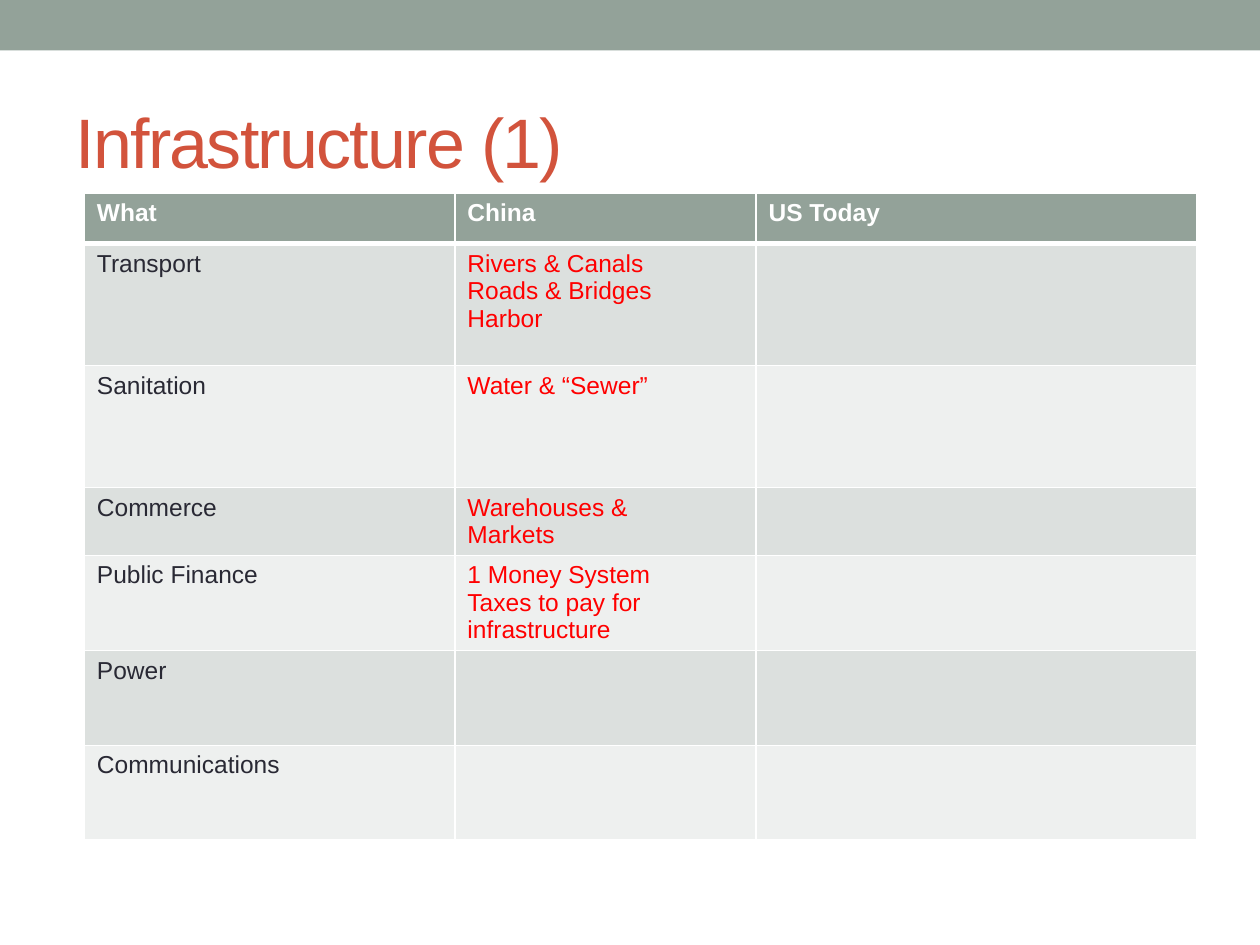
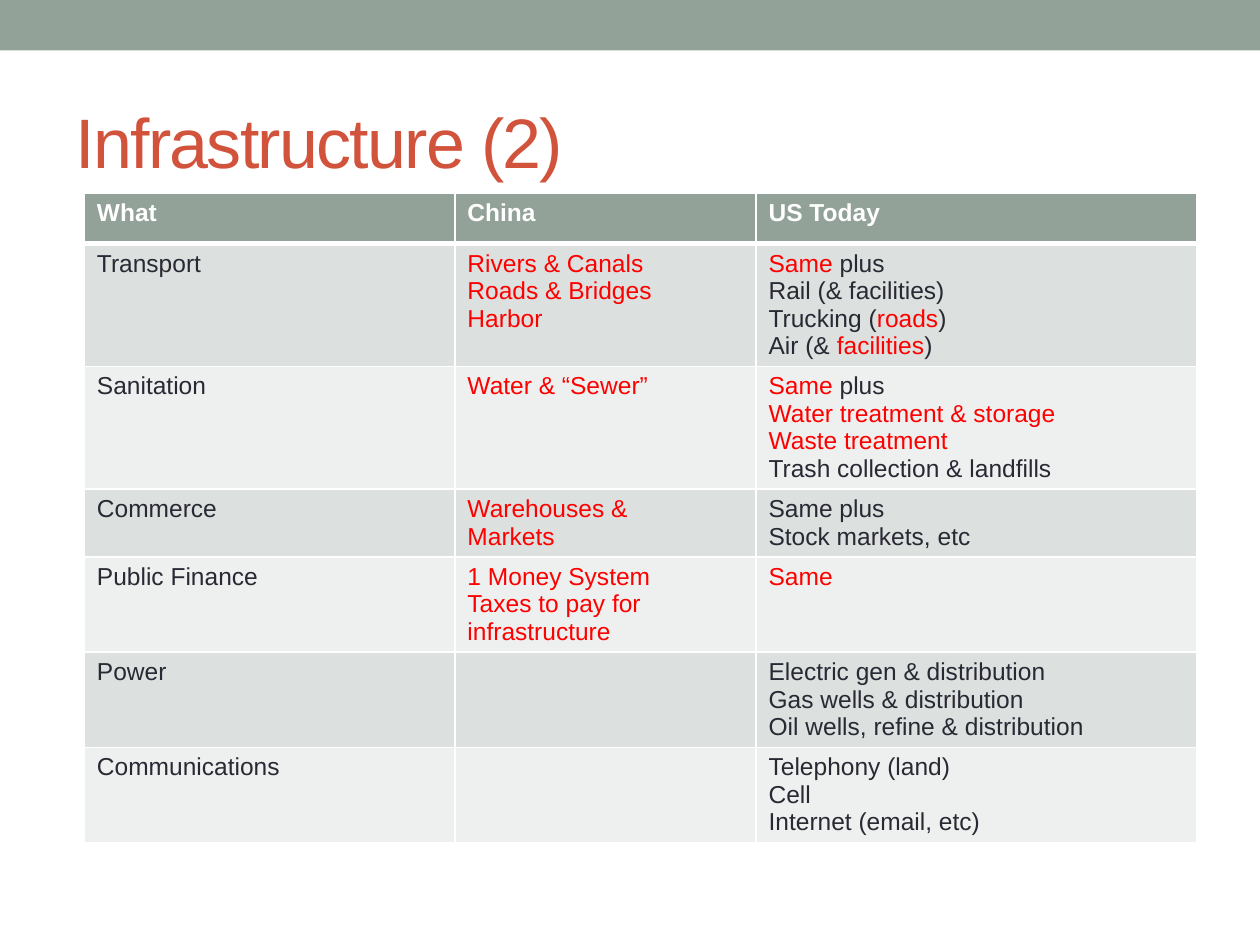
import dataclasses

import pptx
import pptx.dml.color
import pptx.enum.shapes
import pptx.enum.text
import pptx.oxml
import pptx.oxml.ns
import pptx.util
from pptx.util import Cm, Pt

# Content: words between asterisks are highlighted
HEADINGS = ("What", "China", "US Today")
TOPICS = [
    ("Transport",
     ["*Rivers & Canals*", "*Roads & Bridges*", "*Harbor*"],
     ["*Same* plus", "Rail (& facilities)", "Trucking (*roads*)", "Air (& *facilities*)"]),
    ("Sanitation",
     ["*Water & “Sewer”*"],
     ["*Same* plus", "*Water treatment & storage*", "*Waste treatment*",
      "Trash collection & landfills"]),
    ("Commerce",
     ["*Warehouses &*", "*Markets*"],
     ["Same plus", "Stock markets, etc"]),
    ("Public Finance",
     ["*1 Money System*", "*Taxes to pay for infrastructure*"],
     ["*Same*"]),
    ("Power",
     [],
     ["Electric gen & distribution", "Gas wells & distribution",
      "Oil wells, refine & distribution"]),
    ("Communications",
     [],
     ["Telephony (land)", "Cell", "Internet (email, etc)"]),
]
PAGES = [("Infrastructure (1)", False), ("Infrastructure (2)", True)]  # title, US shown

# Layout in centimetres
PAGE_SIZE = (25.4, 19.05)
BAND_HEIGHT = 1.02
TITLE_BOX = (1.27, 1.47, 22.86, 2.74)
TABLE_CORNER = (1.7, 3.89)
COLUMN_WIDTHS = (7.47, 6.07, 8.89)
HEADING_HEIGHT = 1.02
LINES_PER_ROW = (4, 4, 2, 3, 3, 3)
LINE_HEIGHT = 0.55
CELL_PADDING = 0.26


@dataclasses.dataclass(frozen=True)
class Theme:
    font: str = "Arial"
    title_size: int = 40
    table_size: int = 14
    title: str = "D2533C"
    band: str = "93A299"
    ink: str = "292934"
    highlight: str = "FF0000"
    white: str = "FFFFFF"
    stripes: tuple = ("DCE0DE", "EEF0EF")
    thin: int = 1
    thick: int = 3


THEME = Theme()


def rgb(code):
    return pptx.dml.color.RGBColor.from_string(code)


def add_span(para, text, size, color, bold=False):
    span = para.add_run()
    span.text = text
    span.font.name = THEME.font
    span.font.size = Pt(size)
    span.font.bold = bold
    span.font.color.rgb = rgb(color)
    return span


def add_master_band(deck, page):
    """Draw the top band and move it to the master, behind everything."""
    band = page.shapes.add_shape(
        pptx.enum.shapes.MSO_SHAPE.RECTANGLE, 0, 0, deck.slide_width, Cm(BAND_HEIGHT))
    band.shadow.inherit = False
    band.fill.solid()
    band.fill.fore_color.rgb = rgb(THEME.band)
    band.line.fill.background()
    deck.slide_master.element.cSld.spTree.insert(2, band.element)


def set_title(page, text):
    box = page.shapes.title
    box.left, box.top, box.width, box.height = map(Cm, TITLE_BOX)
    frame = box.text_frame
    frame.auto_size = pptx.enum.text.MSO_AUTO_SIZE.NONE
    frame.vertical_anchor = pptx.enum.text.MSO_ANCHOR.MIDDLE
    para = frame.paragraphs[0]
    para.alignment = pptx.enum.text.PP_ALIGN.LEFT
    span = add_span(para, text, THEME.title_size, THEME.title)
    span.font._element.set("spc", "-100")


def set_borders(cell, top, bottom):
    """White lines; they must come before the fill in the cell properties."""
    properties = cell._tc.get_or_add_tcPr()
    widths = {"lnL": THEME.thin, "lnR": THEME.thin, "lnT": top, "lnB": bottom}
    for side, width in widths.items():
        properties.append(pptx.oxml.parse_xml(
            f'<a:{side} {pptx.oxml.ns.nsdecls("a")} w="{Pt(width)}"><a:solidFill>'
            f'<a:srgbClr val="{THEME.white}"/></a:solidFill></a:{side}>'))


def fill_cell(cell, lines, row):
    heading = row == 0
    set_borders(cell,
                top=THEME.thick if row == 1 else THEME.thin,
                bottom=THEME.thick if heading else THEME.thin)
    cell.fill.solid()
    cell.fill.fore_color.rgb = rgb(THEME.band if heading else THEME.stripes[(row - 1) % 2])
    frame = cell.text_frame
    for number, line in enumerate(lines):
        para = frame.add_paragraph() if number else frame.paragraphs[0]
        for part, text in enumerate(line.split("*")):
            if text:
                plain = THEME.white if heading else THEME.ink
                color = THEME.highlight if part % 2 else plain
                add_span(para, text, THEME.table_size, color, heading)


def add_comparison(page, us_shown):
    rows = [[[heading] for heading in HEADINGS]]
    rows += [[[topic], china, us if us_shown else []] for topic, china, us in TOPICS]
    heights = [HEADING_HEIGHT] + [
        count * LINE_HEIGHT + CELL_PADDING for count in LINES_PER_ROW]
    left, top = TABLE_CORNER
    table = page.shapes.add_table(
        len(rows), len(HEADINGS), Cm(left), Cm(top),
        Cm(sum(COLUMN_WIDTHS)), Cm(sum(heights))).table
    for column, width in zip(table.columns, COLUMN_WIDTHS):
        column.width = Cm(width)
    for row, (cells, height) in enumerate(zip(rows, heights)):
        table.rows[row].height = Cm(height)
        for column, lines in enumerate(cells):
            fill_cell(table.cell(row, column), lines, row)


def main():
    deck = pptx.Presentation()
    deck.slide_width, deck.slide_height = map(Cm, PAGE_SIZE)
    title_only = deck.slide_layouts[5]
    for number, (title, us_shown) in enumerate(PAGES):
        page = deck.slides.add_slide(title_only)
        if number == 0:
            add_master_band(deck, page)
        set_title(page, title)
        add_comparison(page, us_shown)
    deck.save("out.pptx")


if __name__ == "__main__":
    main()
